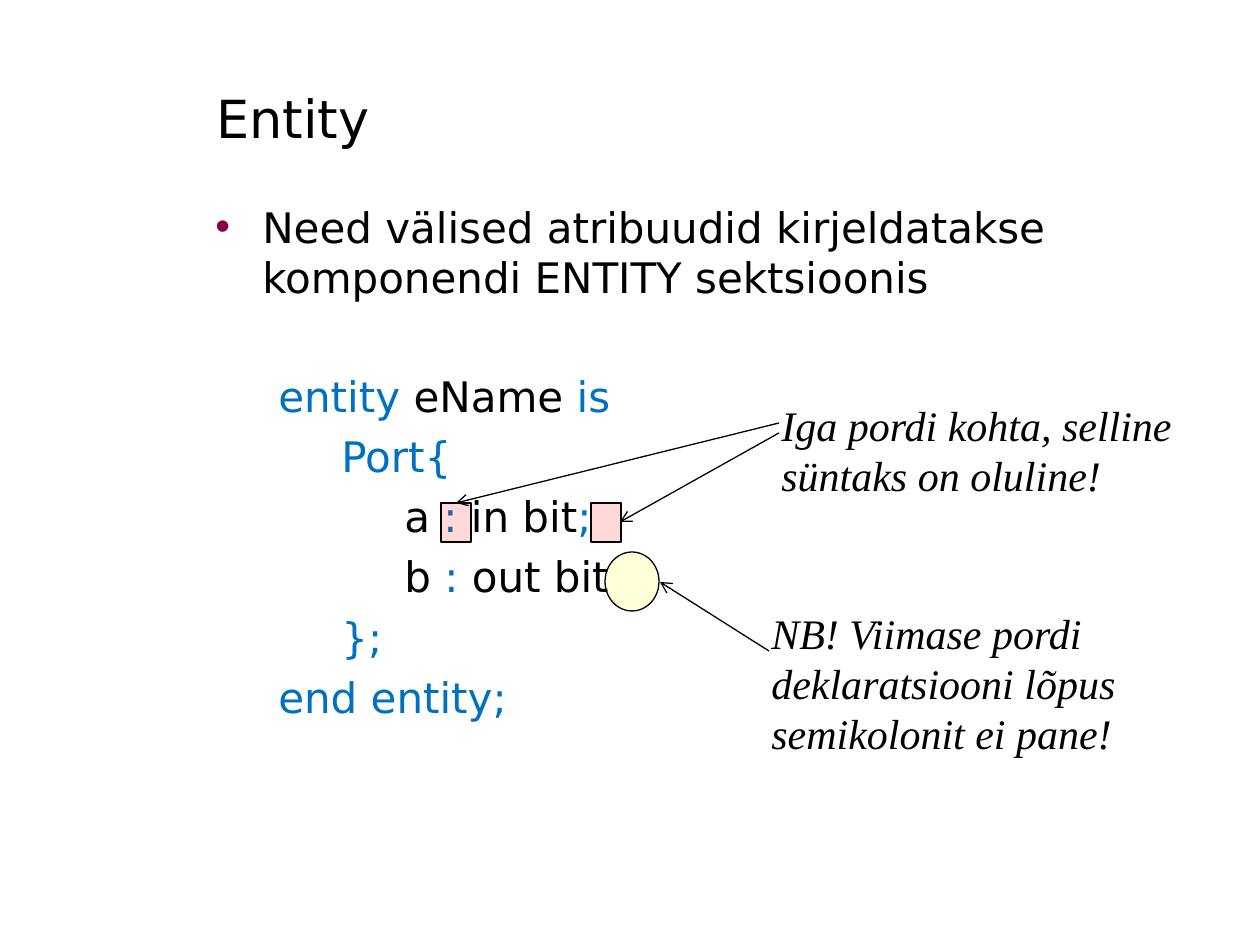
from lxml import etree
from pptx import Presentation, util as u
from pptx.dml.color import RGBColor
from pptx.enum import shapes, text
from pptx.oxml.ns import qn

SCALE = 914400 / 126  # EMU in one px
COLORS = {"ink": "000000", "code": "0070C0", "dot": "870042",
          "red": "FF0000", "yellow": "FFFF00"}
SANS = {"name": "DejaVu Sans", "size": u.Pt(24)}
HEAD = {**SANS, "size": u.Pt(30)}
NOTE = {"name": "Times New Roman", "size": u.Pt(24), "italic": True}
STEP = 63   # code indent
HANG = 47   # bullet indent


def px(n):
    return round(n * SCALE)


def rgb(name):
    return RGBColor.from_string(COLORS[name])


def sub(node, tag, **attrs):
    return etree.SubElement(node, qn(tag), attrs)


class Page:
    def __init__(self, slide):
        self.slide = slide

    def box(self, x, y, w, h, anchor=text.MSO_ANCHOR.TOP):
        frame = self.slide.shapes.add_textbox(px(x), px(y), px(w), px(h)).text_frame
        frame.word_wrap = True
        frame.vertical_anchor = anchor
        return frame

    def words(self, para, runs, style):
        for part, color in runs:
            run = para.add_run()
            run.text = part
            for key, value in style.items():
                setattr(run.font, key, value)
            run.font.color.rgb = rgb(color)

    def bullet(self, para):
        props = para._p.get_or_add_pPr()
        props.set("marL", str(px(HANG)))
        props.set("indent", str(-px(HANG)))
        sub(sub(props, "a:buClr"), "a:srgbClr", val=COLORS["dot"])
        sub(props, "a:buFont", typeface="Arial")
        sub(props, "a:buChar", char="•")

    def code(self, frame, level, runs, gap):
        para = frame.add_paragraph()
        para._p.get_or_add_pPr().set("marL", str(px(level * STEP)))
        para.space_before = u.Pt(gap)
        self.words(para, runs, SANS)

    def mark(self, kind, x, y, w, h, color):
        shape = self.slide.shapes.add_shape(kind, px(x), px(y), px(w), px(h))
        shape.shadow.inherit = False
        shape.fill.solid()
        shape.fill.fore_color.rgb = rgb(color)
        tint = shape._element.spPr.find(".//" + qn("a:srgbClr"))
        sub(tint, "a:alpha", val="15000")
        self.stroke(shape.line)

    def stroke(self, line):
        line.color.rgb = rgb("ink")
        line.width = u.Pt(0.75)

    def arrow(self, *ends):
        link = self.slide.shapes.add_connector(
            shapes.MSO_CONNECTOR.STRAIGHT, *map(px, ends))
        self.stroke(link.line)
        props = link._element.spPr
        sub(props.find(qn("a:ln")), "a:tailEnd", type="arrow")
        sub(props, "a:effectLst")


def main():
    deck = Presentation()
    deck.slide_width, deck.slide_height = px(1260), px(945)
    page = Page(deck.slides.add_slide(deck.slide_layouts[6]))

    # Title
    title = page.box(204, 59, 937, 118, text.MSO_ANCHOR.MIDDLE)
    page.words(title.paragraphs[0], [("Entity", "ink")], HEAD)

    # Bullet and code
    body = page.box(203, 195, 942, 667)
    first = body.paragraphs[0]
    page.bullet(first)
    page.words(first, [("Need välised atribuudid kirjeldatakse "
                        "komponendi ENTITY sektsioonis", "ink")], SANS)
    lines = [
        (1, [("entity ", "code"), ("eName ", "ink"), ("is", "code")]),
        (2, [("Port{", "code")]),
        (3, [("a ", "ink"), (":", "code"), (" in bit", "ink"), (";", "code")]),
        (3, [("b ", "ink"), (":", "code"), (" out bit", "ink")]),
        (2, [("};", "code")]),
        (1, [("end entity;", "code")]),
    ]
    for n, (level, runs) in enumerate(lines):
        page.code(body, level, runs, 5.6 if n else 39)

    # Marks on the punctuation
    for x in (441, 591):
        page.mark(shapes.MSO_SHAPE.RECTANGLE, x, 503, 30, 39, "red")
    page.mark(shapes.MSO_SHAPE.OVAL, 605, 552, 54, 59, "yellow")

    # Notes
    notes = [
        (769, 393, 427, 115, "Iga pordi kohta, selline süntaks on oluline!"),
        (759, 601, 417, 165,
         "NB! Viimase pordi deklaratsiooni lõpus semikolonit ei pane!"),
    ]
    for *place, note in notes:
        page.words(page.box(*place).paragraphs[0], [(note, "ink")], NOTE)

    # Arrows from notes to marks
    for ends in [(779, 423, 456, 503), (779, 433, 620, 522), (769, 651, 660, 582)]:
        page.arrow(*ends)

    deck.save("out.pptx")


if __name__ == "__main__":
    main()
